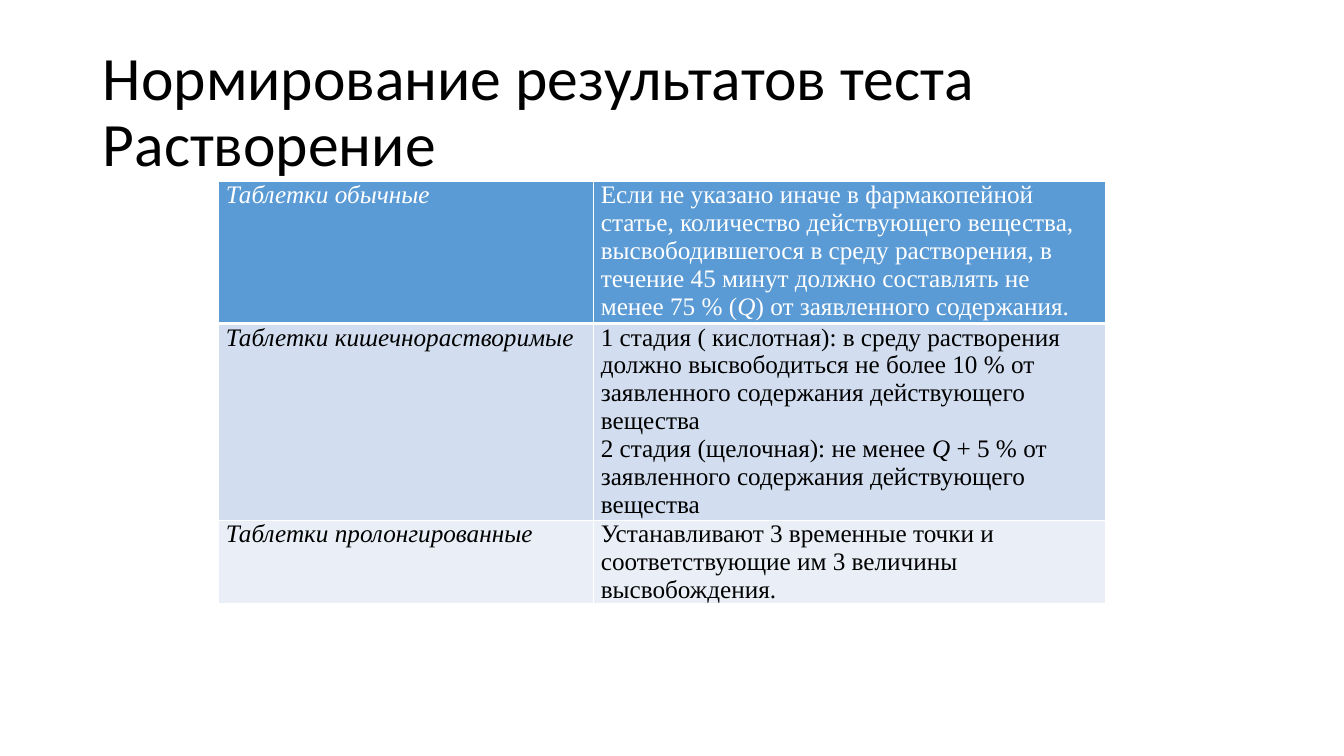
from typing import NamedTuple

from pptx import Presentation
from pptx.dml.color import RGBColor
from pptx.enum.text import MSO_ANCHOR, PP_ALIGN
from pptx.oxml import parse_xml
from pptx.oxml.ns import nsdecls
from pptx.util import Emu, Pt

PX = 9144  # 100 px to the inch
WHITE = RGBColor(0xFF, 0xFF, 0xFF)
BLACK = RGBColor(0x00, 0x00, 0x00)
BLUE = RGBColor(0x5B, 0x9B, 0xD5)
PALE = RGBColor(0xD2, 0xDE, 0xEF)
MIST = RGBColor(0xEA, 0xEF, 0xF7)


class Row(NamedTuple):
    name: str
    rules: list[str]  # one paragraph each, with italics between asterisks
    high: int
    fill: RGBColor
    ink: RGBColor = BLACK
    base: int = 1  # width of the bottom border in points


ROWS = [
    Row("Таблетки обычные",
        ["Если не указано иначе в фармакопейной статье, количество действующего "
         "вещества, высвободившегося в среду растворения, в течение 45 минут должно "
         "составлять не менее 75 % (*Q*) от заявленного содержания."],
        141, BLUE, WHITE, 3),
    Row("Таблетки кишечнорастворимые",
        ["1 стадия ( кислотная): в среду растворения должно высвободиться не более "
         "10 % от заявленного содержания действующего вещества",
         "2 стадия (щелочная): не менее *Q* + 5 % от заявленного содержания "
         "действующего вещества"],
        195, PALE),
    Row("Таблетки пролонгированные",
        ["Устанавливают 3 временные точки и соответствующие им 3 величины "
         "высвобождения."],
        83, MIST),
]
COLS = [372, 508]


def px(n: int) -> Emu:
    return Emu(n * PX)


def place(shape, left: int, top: int, wide: int, high: int) -> None:
    shape.left, shape.top = px(left), px(top)
    shape.width, shape.height = px(wide), px(high)


def edge(cell, base: int) -> None:
    """Draw white borders, which must come before the fill."""
    props = cell._tc.get_or_add_tcPr()
    sides = [("L", 1), ("R", 1), ("T", 1), ("B", base)]
    for i, (side, width) in enumerate(sides):
        props.insert(i, parse_xml(
            f'<a:ln{side} {nsdecls("a")} w="{Pt(width)}"><a:solidFill>'
            f'<a:srgbClr val="{WHITE}"/></a:solidFill></a:ln{side}>'))


def write(cell, texts: list[str], row: Row) -> None:
    cell.margin_left = cell.margin_right = px(7)
    cell.margin_top = cell.margin_bottom = 0
    cell.fill.solid()
    cell.fill.fore_color.rgb = row.fill
    edge(cell, row.base)
    frame = cell.text_frame
    for i, text in enumerate(texts):
        para = frame.add_paragraph() if i else frame.paragraphs[0]
        for j, part in enumerate(text.split("*")):
            if part:
                run = para.add_run()
                run.text = part
                font = run.font
                font.name, font.size = "Times New Roman", Pt(18)
                font.color.rgb = row.ink
                font.bold, font.italic = False, j % 2 == 1


def main() -> None:
    deck = Presentation()
    deck.slide_width, deck.slide_height = px(1333), px(750)
    slide = deck.slides.add_slide(deck.slide_layouts[5])

    # Title
    title = slide.shapes.title
    place(title, 92, 40, 1150, 145)
    title.text_frame.text = "Нормирование результатов теста Растворение"
    title.text_frame.vertical_anchor = MSO_ANCHOR.MIDDLE
    para = title.text_frame.paragraphs[0]
    para.alignment, para.line_spacing = PP_ALIGN.LEFT, 0.9
    para.font.name, para.font.size = "Calibri", Pt(44)
    para.font.color.rgb = BLACK

    # Table of limits
    high = sum(row.high for row in ROWS)
    table = slide.shapes.add_table(
        len(ROWS), len(COLS), px(217), px(180), px(sum(COLS)), px(high)).table
    for col, wide in zip(table.columns, COLS):
        col.width = px(wide)
    for i, row in enumerate(ROWS):
        table.rows[i].height = px(row.high)
        write(table.cell(i, 0), [f"*{row.name}*"], row)
        write(table.cell(i, 1), row.rules, row)

    deck.save("out.pptx")


if __name__ == "__main__":
    main()
